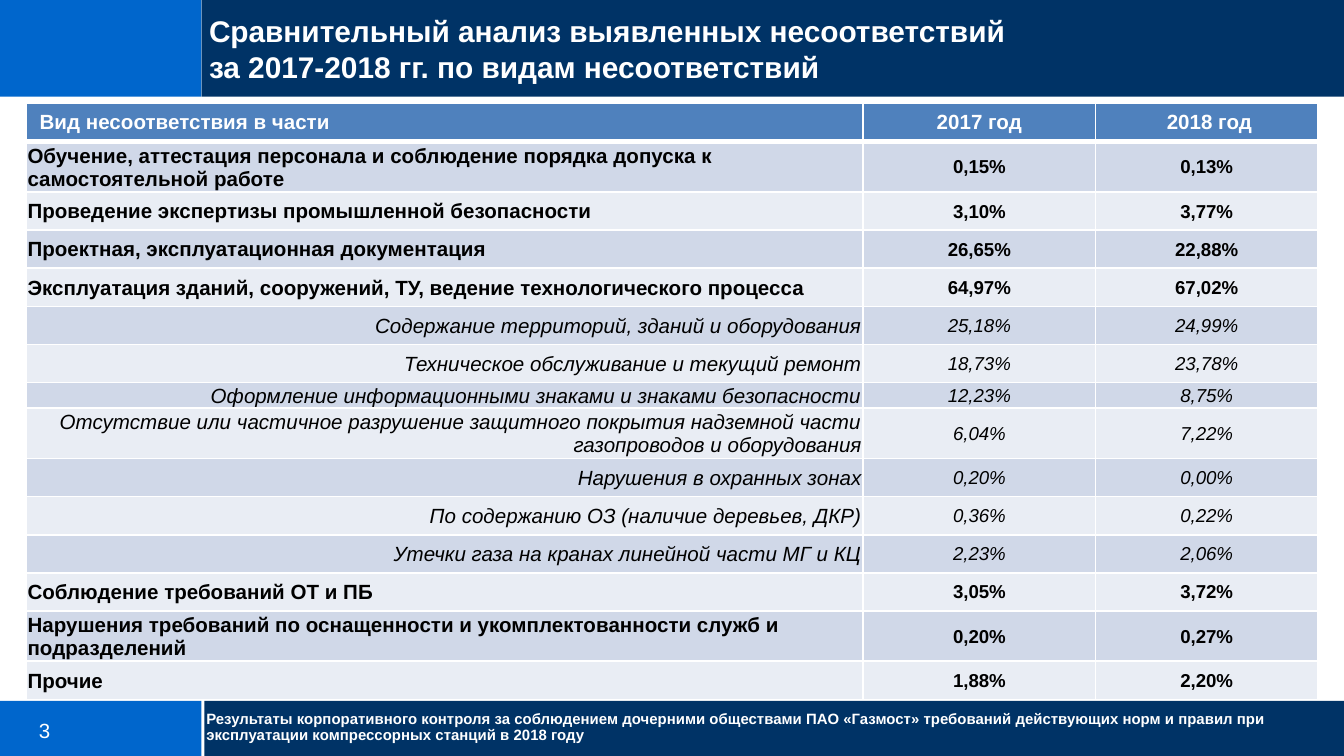
from lxml.etree import SubElement
from pptx import Presentation
from pptx.dml.color import RGBColor
from pptx.enum.shapes import MSO_SHAPE
from pptx.enum.text import MSO_ANCHOR, MSO_AUTO_SIZE, PP_ALIGN
from pptx.oxml.ns import qn
from pptx.util import Inches, Pt

WIDE = 10
HIGH = WIDE * 9 / 16
COL, ROW = WIDE / 100, HIGH / 100
WHITE = RGBColor(0xFF, 0xFF, 0xFF)
BLACK = RGBColor(0x00, 0x00, 0x00)
NAVY = RGBColor(0x00, 0x33, 0x66)
BLUE = RGBColor(0x00, 0x66, 0xCC)
STEEL = RGBColor(0x4F, 0x81, 0xBD)
BANDS = RGBColor(0xD0, 0xD8, 0xE8), RGBColor(0xE9, 0xED, 0xF4)

TITLE = "Сравнительный анализ выявленных несоответствий \vза 2017-2018 гг. по видам несоответствий"
NOTE = (
    "Результаты корпоративного контроля за соблюдением дочерними обществами ПАО «Газмост» "
    "требований действующих норм и правил при эксплуатации компрессорных станций в 2018 году"
)
HEADS = "Вид несоответствия в части", "2017 год", " 2018 год"
MAIN, SUB = False, True
ITEMS = [
    (MAIN, "Обучение, аттестация персонала и соблюдение порядка допуска к самостоятельной работе", "0,15%", "0,13%"),
    (MAIN, "Проведение экспертизы промышленной безопасности", "3,10%", "3,77%"),
    (MAIN, "Проектная, эксплуатационная документация", "26,65%", "22,88%"),
    (MAIN, "Эксплуатация зданий, сооружений, ТУ, ведение технологического процесса", "64,97%", "67,02%"),
    (SUB, "Содержание территорий, зданий и оборудования", "25,18%", "24,99%"),
    (SUB, "Техническое обслуживание и текущий ремонт", "18,73%", "23,78%"),
    (SUB, "Оформление информационными знаками и знаками безопасности", "12,23%", "8,75%"),
    (SUB, "Отсутствие или частичное разрушение защитного покрытия надземной части газопроводов и оборудования",
     "6,04%", "7,22%"),
    (SUB, "Нарушения в охранных зонах", "0,20%", "0,00%"),
    (SUB, "По содержанию ОЗ (наличие деревьев, ДКР)", "0,36%", "0,22%"),
    (SUB, "Утечки газа на кранах линейной части МГ и КЦ", "2,23%", "2,06%"),
    (MAIN, "Соблюдение требований ОТ и ПБ", "3,05%", "3,72%"),
    (MAIN, "Нарушения требований по оснащенности и укомплектованности служб и подразделений", "0,20%", "0,27%"),
    (MAIN, "Прочие", "1,88%", "2,20%"),
]
PLAIN = 5.04
SIZES = {1: 6.67, 7: 3.4, 8: 6.67, 13: 6.67}


def place(left, top, wide, high):
    return Inches(left * COL), Inches(top * ROW), Inches(wide * COL), Inches(high * ROW)


def write(frame, text, size=11, color=WHITE, bold=False, slant=False, align=PP_ALIGN.LEFT, space=None):
    para = frame.paragraphs[0]
    para.text = text
    para.alignment = align
    para.line_spacing = space
    for gap in para._p.findall(qn("a:br")):
        SubElement(gap, qn("a:rPr"), sz=str(size * 100))
    for run in para.runs:
        font = run.font
        font.name, font.size = "Arial", Pt(size)
        font.bold, font.italic = bold, slant
        font.color.rgb = color


def fit(frame, side, edge):
    frame.word_wrap = True
    frame.auto_size = MSO_AUTO_SIZE.NONE
    frame.vertical_anchor = MSO_ANCHOR.TOP
    frame.margin_left = frame.margin_right = Inches(side)
    frame.margin_top = frame.margin_bottom = Inches(edge)


def block(slide, box, color):
    shape = slide.shapes.add_shape(MSO_SHAPE.RECTANGLE, *place(*box))
    shape.shadow.inherit = False
    shape.fill.solid()
    shape.fill.fore_color.rgb = color
    shape.line.fill.background()


def label(slide, box, text, side=0, edge=0, **look):
    frame = slide.shapes.add_textbox(*place(*box)).text_frame
    fit(frame, side, edge)
    write(frame, text, **look)


def footer(slide, box):
    left, top, wide, high = box
    block(slide, (left + 0.152 * wide, top, 0.848 * wide, high), NAVY)
    block(slide, (left, top, 0.15 * wide, high), BLUE)
    label(slide, (left + 0.029 * wide, top + 0.31 * high, 0.053 * wide, 0.34 * high), "3")
    label(slide, (left + 0.1455 * wide, top + 0.1 * high, 0.818 * wide, 0.78 * high), NOTE,
          side=0.08, edge=0.04, size=8, bold=True, space=0.9)


def header(slide, box):
    left, top, wide, high = box
    block(slide, (left, top, 0.15 * wide, high), BLUE)
    block(slide, (left + 0.15 * wide, top, 0.85 * wide, high), NAVY)
    title = slide.shapes.title
    title.left, title.top, title.width, title.height = place(
        left + 0.1455 * wide, top + 0.06 * high, 0.845 * wide, 0.89 * high)
    fit(title.text_frame, 0.1, 0.05)
    write(title.text_frame, TITLE, size=16, bold=True)
    tree = title._element.getparent()
    tree.append(title._element)


def paint(cell, color, base=1):
    props = cell._tc.get_or_add_tcPr()
    for side in "LRTB":
        width = Pt(base if side == "B" else 1)
        line = SubElement(props, qn("a:ln" + side), w=str(width))
        fill = SubElement(line, qn("a:solidFill"))
        SubElement(fill, qn("a:srgbClr"), val=str(WHITE))
    cell.fill.solid()
    cell.fill.fore_color.rgb = color
    cell.vertical_anchor = MSO_ANCHOR.MIDDLE


def grid(slide, box):
    wide = box[2]
    table = slide.shapes.add_table(len(ITEMS) + 1, len(HEADS), *place(*box)).table
    for col, share in zip(table.columns, (0.648, 0.18, 0.172)):
        col.width = Inches(share * wide * COL)
    for num, row in enumerate(table.rows):
        row.height = Inches(SIZES.get(num, PLAIN) * ROW)
    for num, text in enumerate(HEADS):
        cell = table.cell(0, num)
        paint(cell, STEEL, base=3)
        write(cell.text_frame, text, bold=True, align=PP_ALIGN.CENTER if num else PP_ALIGN.LEFT)
    for row, (sub, *texts) in enumerate(ITEMS, 1):
        start = PP_ALIGN.RIGHT if sub else PP_ALIGN.LEFT
        for num, text in enumerate(texts):
            cell = table.cell(row, num)
            paint(cell, BANDS[(row - 1) % 2])
            cell.margin_left = cell.margin_right = cell.margin_top = Inches(0.01)
            cell.margin_bottom = 0
            write(cell.text_frame, text, size=10 if num else 11, color=BLACK, bold=not sub, slant=sub,
                  align=PP_ALIGN.CENTER if num else start)


def main():
    deck = Presentation()
    deck.slide_width, deck.slide_height = Inches(WIDE), Inches(HIGH)
    slide = deck.slides.add_slide(deck.slide_layouts[5])
    footer(slide, (0, 92.7, 100, 7.3))
    header(slide, (0, 0, 100, 12.8))
    grid(slide, (1.95, 13.7, 96.1, 79))
    deck.save("out.pptx")


if __name__ == "__main__":
    main()
